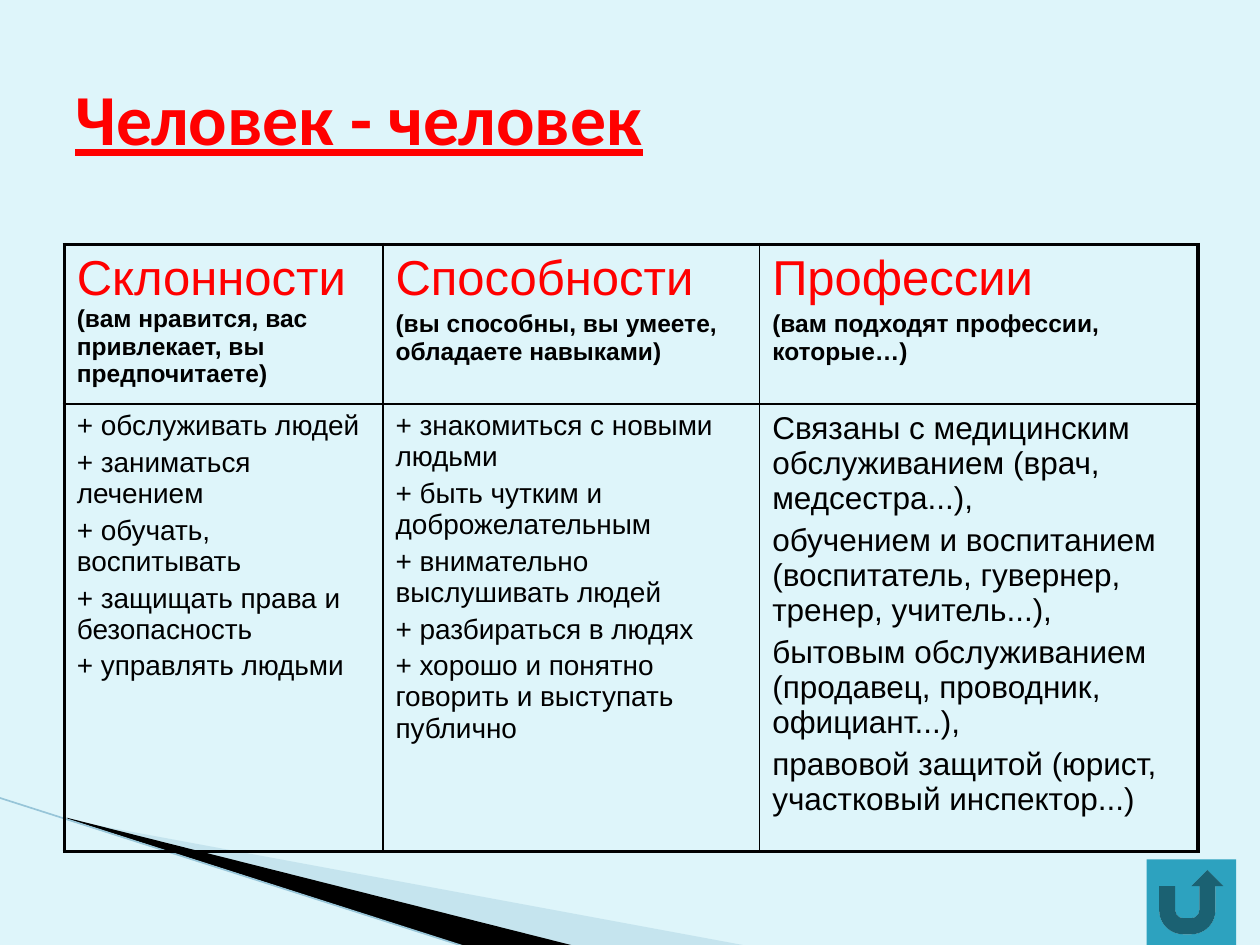
from lxml.etree import SubElement
from pptx import Presentation
from pptx.dml.color import RGBColor
from pptx.enum.shapes import MSO_CONNECTOR, MSO_SHAPE
from pptx.enum.text import MSO_ANCHOR
from pptx.oxml.ns import qn
from pptx.util import Inches, Pt

COLORS = {
    "background": "DEF5FA",
    "red": "FF0000",
    "black": "000000",
    "pale_blue": "A0CBDC",
    "line_blue": "97C5D8",
    "button": "2DA2BF",
}

TITLE = {"name": "Calibri", "size": 41, "color": "red", "bold": True, "underline": True}
HEADING = {"name": "Arial", "size": 28, "color": "red", "bold": False}
NOTE = {"name": "Arial", "size": 14, "color": "black", "bold": True}
ITEM = {"name": "Arial", "size": 16, "color": "black", "bold": False}
PROFESSION = {**ITEM, "size": 18}

COLUMN_WIDTHS = [2.53, 2.99, 3.48]
ROW_HEIGHTS = [1.19, 3.33]
OUTER_BORDER, INNER_BORDER = 2.25, 1

# A cell is a list of paragraphs, a paragraph is a list of (text, format) runs
HEADER_CELLS = [
    [[("Склонности ", HEADING), ("(вам нравится, вас привлекает, вы предпочитаете)", NOTE)]],
    [[("Способности", HEADING)], [("(вы способны, вы умеете, обладаете навыками)", NOTE)]],
    [[("Профессии", HEADING)], [("(вам подходят профессии, которые…)", NOTE)]],
]
BODY_TEXTS = [
    (ITEM, [
        "+ обслуживать людей",
        "+ заниматься лечением",
        "+ обучать, воспитывать",
        "+ защищать права и безопасность",
        "+ управлять людьми",
    ]),
    (ITEM, [
        "+ знакомиться с новыми людьми",
        "+ быть чутким и доброжелательным",
        "+ внимательно выслушивать людей",
        "+ разбираться в людях",
        "+ хорошо и понятно говорить и выступать публично",
    ]),
    (PROFESSION, [
        "Связаны с медицинским обслуживанием (врач, медсестра...),",
        "обучением и воспитанием (воспитатель, гувернер, тренер, учитель...),",
        "бытовым обслуживанием (продавец, проводник, официант...),",
        "правовой защитой (юрист, участковый инспектор...)",
    ]),
]
BODY_CELLS = [[[(text, style)] for text in texts] for style, texts in BODY_TEXTS]

# Decorative wedges: corner points, colour, opacity in percent
WEDGES = [
    ([(0.55, 6.51), (5.95, 7.51), (4.56, 7.51), (0.55, 6.5)], "pale_blue", 40),
    ([(0.53, 6.49), (4.57, 7.51), (3.72, 7.52), (0.54, 6.5)], "black", 100),
]


def rgb(name):
    return RGBColor.from_string(COLORS[name])


def add_run(paragraph, text, style):
    run = paragraph.add_run()
    run.text = text
    for key, value in style.items():
        if key == "color":
            run.font.color.rgb = rgb(value)
        else:
            setattr(run.font, key, Pt(value) if key == "size" else value)


def fill_text(text_frame, paragraphs):
    for index, runs in enumerate(paragraphs):
        paragraph = text_frame.paragraphs[0] if index == 0 else text_frame.add_paragraph()
        if index:
            paragraph.space_before = Pt(round(0.2 * runs[0][1]["size"], 1))
        for text, style in runs:
            add_run(paragraph, text, style)


def set_solid(shape, color):
    shape.shadow.inherit = False
    shape.fill.solid()
    shape.fill.fore_color.rgb = rgb(color)
    shape.line.fill.background()


def add_wedge(slide, points, color, opacity):
    corners = [(Inches(x), Inches(y)) for x, y in points]
    builder = slide.shapes.build_freeform(*corners[0])
    builder.add_line_segments(corners[1:], close=True)
    shape = builder.convert_to_shape()
    set_solid(shape, color)
    if opacity < 100:
        color_element = shape.fill._xPr.find(".//" + qn("a:srgbClr"))
        SubElement(color_element, qn("a:alpha"), val=str(opacity * 1000))


def add_edge_line(slide):
    line = slide.shapes.add_connector(
        MSO_CONNECTOR.STRAIGHT, Inches(-0.01), Inches(6.33), Inches(3.71), Inches(7.52))
    line.line.color.rgb = rgb("line_blue")
    line.line.width = Pt(0.95)
    SubElement(line._element.spPr, qn("a:effectLst"))


def add_title(slide):
    box = slide.shapes.add_textbox(Inches(0.5), Inches(0.3), Inches(9), Inches(1.25))
    box.text_frame.word_wrap = True
    box.text_frame.vertical_anchor = MSO_ANCHOR.MIDDLE
    fill_text(box.text_frame, [[("Человек - человек", TITLE)]])


def set_borders(cell, outer_sides):
    properties = cell._tc.get_or_add_tcPr()
    for side in "LRTB":
        width = OUTER_BORDER if side in outer_sides else INNER_BORDER
        border = SubElement(properties, qn("a:ln" + side), w=str(Pt(width)))
        solid = SubElement(border, qn("a:solidFill"))
        SubElement(solid, qn("a:srgbClr"), val=COLORS["black"])


def add_profile_table(slide):
    rows = [HEADER_CELLS, BODY_CELLS]
    table = slide.shapes.add_table(
        len(rows), len(COLUMN_WIDTHS), Inches(0.51), Inches(1.94),
        Inches(sum(COLUMN_WIDTHS)), Inches(sum(ROW_HEIGHTS))).table
    table.first_row = table.horz_banding = False
    for column, width in zip(table.columns, COLUMN_WIDTHS):
        column.width = Inches(width)
    for row, height in zip(table.rows, ROW_HEIGHTS):
        row.height = Inches(height)
    for row_index, row in enumerate(rows):
        for column_index, paragraphs in enumerate(row):
            cell = table.cell(row_index, column_index)
            outer_sides = "TB"[row_index] + ("L", "", "R")[column_index]
            set_borders(cell, outer_sides)
            cell.fill.background()
            fill_text(cell.text_frame, paragraphs)


def add_return_button(slide):
    button = slide.shapes.add_shape(
        MSO_SHAPE.ACTION_BUTTON_RETURN, Inches(9.1), Inches(6.82), Inches(0.71), Inches(0.68))
    set_solid(button, "button")


def main():
    presentation = Presentation()
    presentation.slide_width, presentation.slide_height = Inches(10), Inches(7.5)
    slide = presentation.slides.add_slide(presentation.slide_layouts[6])
    slide.background.fill.solid()
    slide.background.fill.fore_color.rgb = rgb("background")

    # Corner decoration
    for points, color, opacity in WEDGES:
        add_wedge(slide, points, color, opacity)
    add_edge_line(slide)

    # Content
    add_title(slide)
    add_profile_table(slide)
    add_return_button(slide)
    presentation.save("out.pptx")


if __name__ == "__main__":
    main()
